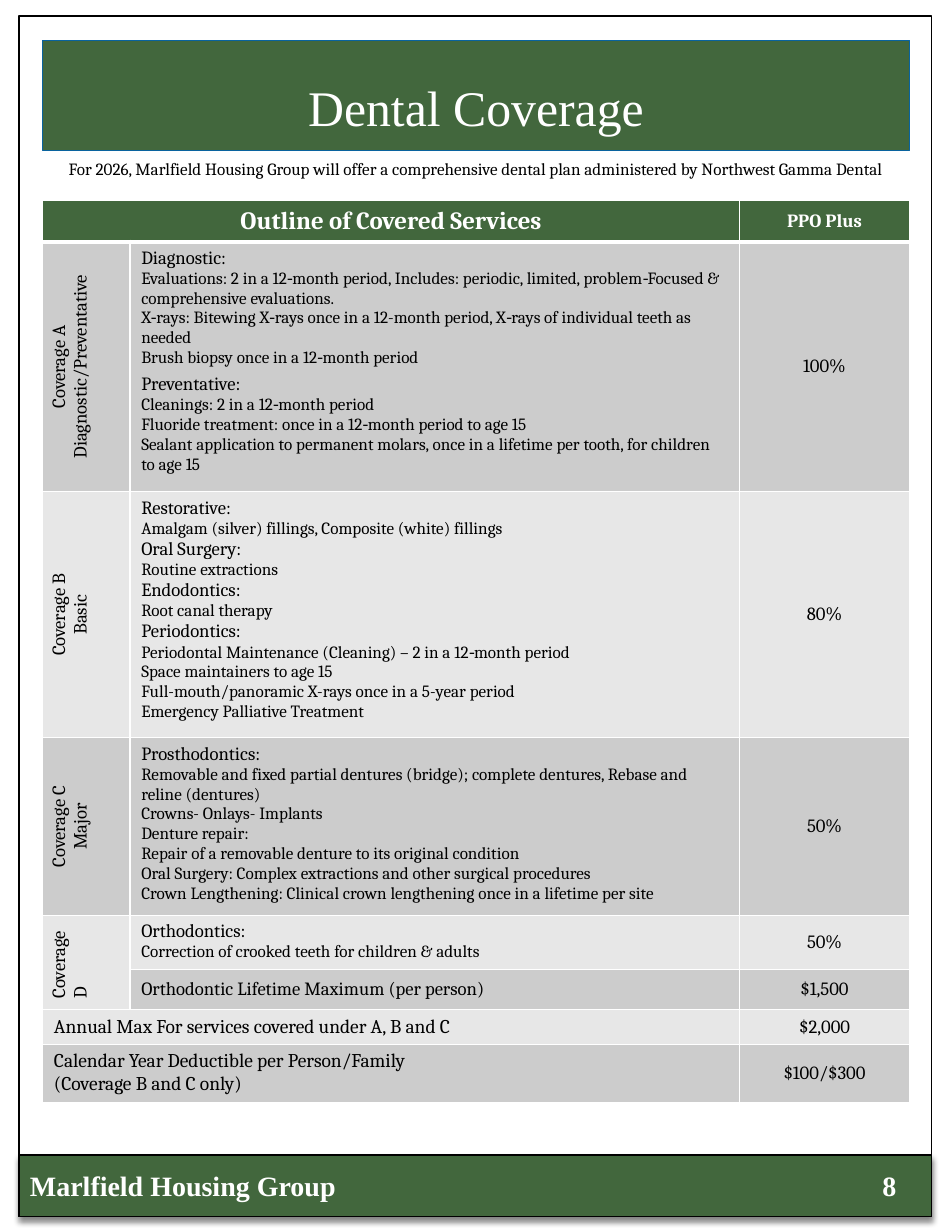
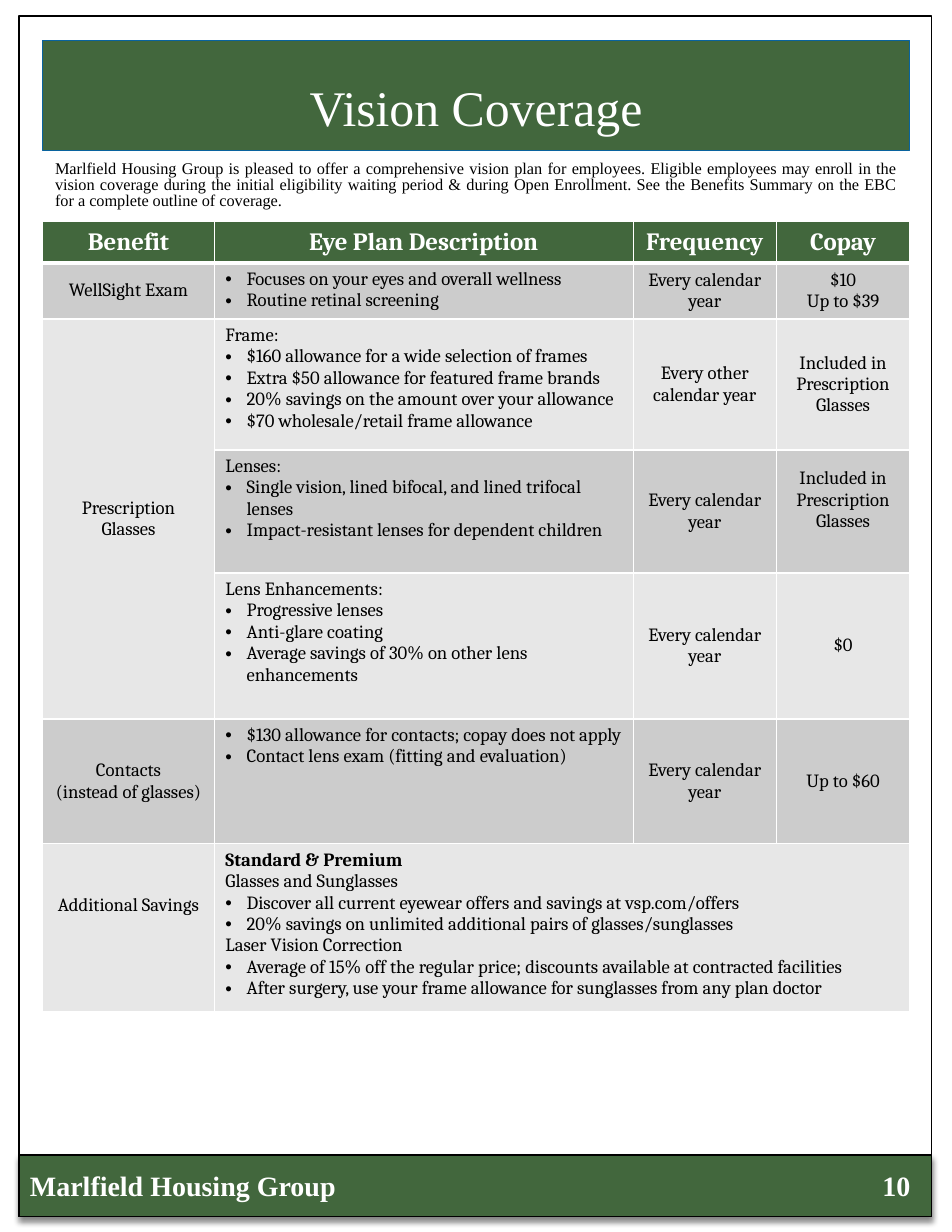
"""Build the dental and vision coverage pages of a benefits guide."""
from lxml import etree
from pptx import Presentation
from pptx.dml.color import RGBColor
from pptx.enum.shapes import MSO_SHAPE
from pptx.enum.text import MSO_ANCHOR, PP_ALIGN
from pptx.oxml.ns import qn
from pptx.util import Cm, Pt

GREEN = RGBColor(0x42, 0x67, 0x3D)
BLUE = RGBColor(0x09, 0x63, 0x9E)
BLACK = RGBColor(0, 0, 0)
WHITE = RGBColor(255, 255, 255)
DARK = RGBColor(0xCC, 0xCC, 0xCC)
LIGHT = RGBColor(0xE7, 0xE7, 0xE7)
SERIF = "Times New Roman"
BODY = "Cambria"
GROUP = "Marlfield Housing Group"
YEAR = "Every calendar year"
GLASS = "Included in Prescription Glasses"

DENTAL = [
    ["Outline of Covered Services", None, "PPO Plus"],
    ["Coverage A\nDiagnostic/Preventative",
     "#Diagnostic:\n"
     "Evaluations: 2 in a 12‐month period, Includes: periodic, limited, "
     "problem‐Focused & comprehensive evaluations.\n"
     "X‐rays: Bitewing X‐rays once in a 12-month period, X‐rays of individual "
     "teeth as needed\n"
     "Brush biopsy once in a 12‐month period\n"
     "#Preventative:\n"
     "Cleanings: 2 in a 12‐month period\n"
     "Fluoride treatment: once in a 12‐month period to age 15\n"
     "Sealant application to permanent molars, once in a lifetime per tooth, "
     "for children to age 15",
     "100%"],
    ["Coverage B\nBasic",
     "#Restorative:\n"
     "Amalgam (silver) fillings, Composite (white) fillings\n"
     "#Oral Surgery:\n"
     "Routine extractions\n"
     "#Endodontics:\n"
     "Root canal therapy\n"
     "#Periodontics:\n"
     "Periodontal Maintenance (Cleaning) – 2 in a 12‐month period\n"
     "Space maintainers to age 15\n"
     "Full-mouth/panoramic X-rays once in a 5-year period\n"
     "Emergency Palliative Treatment",
     "80%"],
    ["Coverage C\nMajor",
     "#Prosthodontics:\n"
     "Removable and fixed partial dentures (bridge); complete dentures, "
     "Rebase and reline (dentures)\n"
     "Crowns- Onlays- Implants\n"
     "Denture repair:\n"
     "Repair of a removable denture to its original condition\n"
     "Oral Surgery: Complex extractions and other surgical procedures\n"
     "Crown Lengthening: Clinical crown lengthening once in a lifetime per site",
     "50%"],
    ["Coverage D",
     "#Orthodontics:\nCorrection of crooked teeth for children & adults", "50%"],
    [None, "#Orthodontic Lifetime Maximum (per person)", "$1,500"],
    ["Annual Max For services covered under A, B and C", None, "$2,000"],
    ["Calendar Year Deductible per Person/Family\n(Coverage B and C only)",
     None, "$100/$300"],
]

VISION = [
    ["Benefit", "Eye Plan Description", "Frequency", "Copay"],
    ["WellSight Exam",
     "•Focuses on your eyes and overall wellness\n•Routine retinal screening",
     YEAR, "$10\nUp to $39"],
    ["Prescription Glasses",
     "Frame:\n"
     "•$160 allowance for a wide selection of frames\n"
     "•Extra $50 allowance for featured frame brands\n"
     "•20% savings on the amount over your allowance\n"
     "•$70 wholesale/retail frame allowance",
     "Every other calendar year", GLASS],
    [None,
     "Lenses:\n"
     "•Single vision, lined bifocal, and lined trifocal lenses\n"
     "•Impact-resistant lenses for dependent children",
     YEAR, GLASS],
    [None,
     "Lens Enhancements:\n"
     "•Progressive lenses\n"
     "•Anti-glare coating\n"
     "•Average savings of 30% on other lens enhancements",
     YEAR, "$0"],
    ["Contacts\n(instead of glasses)",
     "•$130 allowance for contacts; copay does not apply\n"
     "•Contact lens exam (fitting and evaluation)",
     YEAR, "Up to $60"],
    ["Additional Savings",
     "*Standard & Premium\n"
     "Glasses and Sunglasses\n"
     "•Discover all current eyewear offers and savings at vsp.com/offers\n"
     "•20% savings on unlimited additional pairs of glasses/sunglasses\n"
     "Laser Vision Correction\n"
     "•Average of 15% off the regular price; discounts available at contracted "
     "facilities\n"
     "•After surgery, use your frame allowance for sunglasses from any plan doctor",
     None, None],
]


def style(para, size, face=BODY, color=BLACK, bold=False):
    """Format every run of a paragraph."""
    for run in para.runs:
        font = run.font
        font.size, font.name, font.bold = Pt(size), face, bold
        font.color.rgb = color


def box(slide, x, y, wide, high, fill=None, edge=BLACK, line=1):
    """Draw a plain rectangle."""
    rect = slide.shapes.add_shape(MSO_SHAPE.RECTANGLE, Cm(x), Cm(y), Cm(wide), Cm(high))
    rect.shadow.inherit = False
    if fill is None:
        rect.fill.background()
    else:
        rect.fill.solid()
        rect.fill.fore_color.rgb = fill
    rect.line.color.rgb = edge
    rect.line.width = Pt(line)
    return rect


def shade(rect):
    """Cast a soft shadow below a shape."""
    effects = rect._element.spPr.find(qn("a:effectLst"))
    drop = etree.SubElement(effects, qn("a:outerShdw"), blurRad=str(Pt(4)),
                            dist=str(Pt(2.5)), dir="5400000", rotWithShape="0")
    color = etree.SubElement(drop, qn("a:srgbClr"), val=str(BLACK))
    etree.SubElement(color, qn("a:alpha"), val="47000")


def label(slide, x, y, wide, high, text, size, **look):
    """Place a line or block of text and return its frame."""
    frame = slide.shapes.add_textbox(Cm(x), Cm(y), Cm(wide), Cm(high)).text_frame
    frame.word_wrap = True
    frame.text = text
    style(frame.paragraphs[0], size, **look)
    return frame


def page(deck, title, number):
    """Add a slide with its frame, footer, band and title."""
    slide = deck.slides.add_slide(deck.slide_layouts[5])
    box(slide, 0.43, 0.36, 20.7, 27.23)
    shade(box(slide, 0.43, 26.19, 20.7, 1.4, GREEN))
    for x, wide, text in ((19.76, 1.83, number), (0.43, 16.87, GROUP)):
        label(slide, x, 26.37, wide, 1.02, text, 18, face=SERIF, color=WHITE, bold=True)
    box(slide, 0.97, 0.91, 19.66, 2.51, GREEN, BLUE, 0.75)
    head = slide.shapes.title
    head.left, head.top, head.width, head.height = Cm(0.64), Cm(1.47), Cm(20.32), Cm(1.88)
    head.text_frame.text = title
    head.text_frame.paragraphs[0].alignment = PP_ALIGN.CENTER
    style(head.text_frame.paragraphs[0], 32, SERIF, WHITE)
    slide.shapes._spTree.append(head._element)
    return slide


def dot(para):
    """Give a paragraph a bullet with a hanging indent."""
    props = para._p.get_or_add_pPr()
    props.set("marL", str(Cm(0.48)))
    props.set("indent", str(-Cm(0.48)))
    etree.SubElement(props, qn("a:buFont"), typeface="Arial")
    etree.SubElement(props, qn("a:buChar"), char="•")


def write(cell, text, size, left=False, color=BLACK, bold=False):
    """Fill a cell; # marks a heading, * bold and • a bullet."""
    lines = text.split("\n")
    cell.text_frame.text = "\n".join(line.lstrip("#*•") for line in lines)
    top = left and len(lines) > 1
    cell.vertical_anchor = MSO_ANCHOR.TOP if top else MSO_ANCHOR.MIDDLE
    for para, line in zip(cell.text_frame.paragraphs, lines):
        if line[0] == "•":
            dot(para)
        para.alignment = PP_ALIGN.LEFT if left else PP_ALIGN.CENTER
        style(para, 12 if line[0] == "#" else size, color=color,
              bold=bold or line[0] == "*")


def paint(cell, fill, base):
    """Set the white borders and the fill of a cell."""
    props = cell._tc.get_or_add_tcPr()
    for side in "LRTB":
        width = base if side == "B" else 1
        line = etree.SubElement(props, qn("a:ln" + side), w=str(Pt(width)))
        solid = etree.SubElement(line, qn("a:solidFill"))
        etree.SubElement(solid, qn("a:srgbClr"), val=str(WHITE))
    cell.fill.solid()
    cell.fill.fore_color.rgb = fill


def grid(slide, y, cols, rows, data, spans, size):
    """Add a table with a green head and grey rows in turn."""
    frame = slide.shapes.add_table(len(rows), len(cols), Cm(0.97), Cm(y),
                                   Cm(sum(cols)), Cm(sum(rows)))
    table = frame.table
    table.horz_banding = False
    for col, wide in zip(table.columns, cols):
        col.width = Cm(wide)
    for row, high in zip(table.rows, rows):
        row.height = Cm(high)
    for r, texts in enumerate(data):
        for c, text in enumerate(texts):
            cell = table.cell(r, c)
            paint(cell, (DARK if r % 2 else LIGHT) if r else GREEN, 1 if r else 3)
            if text and r:
                write(cell, text, size if c == 1 else 12, c == 1)
            elif text:
                write(cell, text, 16, color=WHITE, bold=True)
    for first, last in spans:
        table.cell(*first).merge(table.cell(*last))
    return table


def dental(deck):
    """Build the dental page."""
    slide = page(deck, "Dental Coverage", "8")
    intro = label(slide, 0.64, 3.56, 20.32, 1.5,
                  f"For 2026, {GROUP} will offer a comprehensive dental plan "
                  "administered by Northwest Gamma Dental", 11).paragraphs[0]
    intro.alignment, intro.line_spacing = PP_ALIGN.CENTER, 0.8
    table = grid(slide, 4.55, (1.98, 13.82, 3.86),
                 (0.93, 5.67, 5.58, 4.01, 1.22, 0.91, 0.79, 1.29), DENTAL,
                 [((r, 0), (r, 1)) for r in (0, 6, 7)] + [((4, 0), (5, 0))], 11)
    write(table.cell(0, 2), "PPO Plus", 12, color=WHITE, bold=True)
    for r in range(1, 5):
        table.cell(r, 0)._tc.tcPr.set("vert", "vert270")
    for r, size in ((4, 12), (6, 12.5), (7, 12.5)):
        write(table.cell(r, 0), DENTAL[r][0], size, True)
    table.cell(4, 0).vertical_anchor = MSO_ANCHOR.TOP
    table.cell(1, 1).text_frame.paragraphs[4].space_before = Pt(4)


def vision(deck):
    """Build the vision page."""
    slide = page(deck, "Vision Coverage", "10")
    frame = label(slide, 0.97, 3.53, 19.66, 1.32,
                  f"{GROUP} is pleased to offer a comprehensive vision plan for "
                  "employees. Eligible employees may enroll in the vision coverage "
                  "during the initial eligibility waiting period & during Open "
                  "Enrollment. See the Benefits Summary on the EBC for a complete "
                  "outline of coverage.", 10.5, face=SERIF)
    frame.margin_left = frame.margin_right = Cm(0.28)
    frame.margin_top = frame.margin_bottom = Cm(0.15)
    intro = frame.paragraphs[0]
    intro.alignment, intro.line_spacing = PP_ALIGN.JUSTIFY, 0.8
    table = grid(slide, 5.03, (3.89, 9.5, 3.25, 3.02),
                 (0.93, 1.27, 2.97, 2.79, 3.31, 2.83, 3.81), VISION,
                 [((2, 0), (4, 0)), ((6, 1), (6, 3))], 12)
    table.cell(3, 3).margin_bottom = Cm(0.63)
    table.cell(6, 0).margin_bottom = Cm(1.13)


def main():
    """Build and save the deck."""
    deck = Presentation()
    deck.slide_width, deck.slide_height = Cm(21.59), Cm(27.94)
    dental(deck)
    vision(deck)
    deck.save("out.pptx")


if __name__ == "__main__":
    main()
